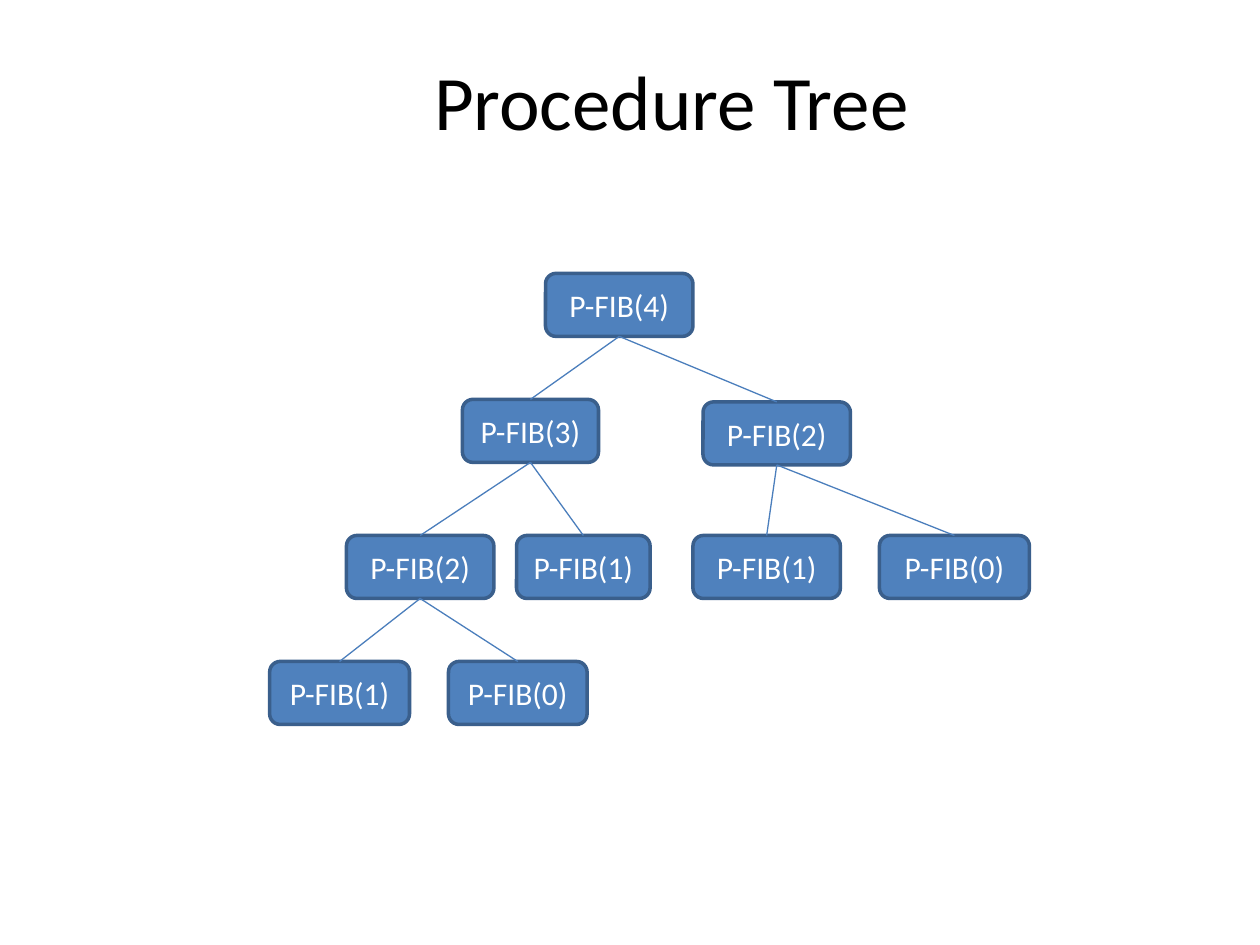
from lxml import etree
from pptx import Presentation
from pptx.dml.color import RGBColor
from pptx.enum.shapes import MSO_CONNECTOR, MSO_SHAPE
from pptx.enum.text import MSO_ANCHOR, PP_ALIGN
from pptx.oxml.ns import qn
from pptx.util import Inches, Pt

STRAIGHT = MSO_CONNECTOR.STRAIGHT
ROUNDED = MSO_SHAPE.ROUNDED_RECTANGLE
MIDDLE = MSO_ANCHOR.MIDDLE
CENTER = PP_ALIGN.CENTER

COLORS = {"title": "000000", "node": "4F81BD", "border": "3A5F8C",
          "label": "FFFFFF", "edge": "4B7EBC"}
FONT = "Calibri"
NODE_HEIGHT = 0.5
TOP_SITE, BOTTOM_SITE = 0, 2

# (argument, left, top, width, children)
TREE = (4, 4.33, 2.17, 1.17, [
    (3, 3.67, 3.17, 1.08, [
        (2, 2.75, 4.25, 1.17, [
            (1, 2.14, 5.25, 1.11, []),
            (0, 3.56, 5.25, 1.1, []),
        ]),
        (1, 4.1, 4.25, 1.06, []),
    ]),
    (2, 5.58, 3.19, 1.17, [
        (1, 5.5, 4.25, 1.17, []),
        (0, 6.98, 4.25, 1.19, []),
    ]),
])


def rgb(name):
    return RGBColor.from_string(COLORS[name])


def write_text(sp, text, size, color):
    tf = sp.text_frame
    tf.word_wrap = True
    tf.vertical_anchor = MIDDLE
    p = tf.paragraphs[0]
    p.alignment = CENTER
    r = p.add_run()
    r.text = text
    r.font.name = FONT
    r.font.size = Pt(size)
    r.font.color.rgb = rgb(color)


def add_title(slide, text):
    sp = slide.shapes.title
    sp.left, sp.top = Inches(0.83), Inches(0.17)
    sp.width, sp.height = Inches(9), Inches(1.25)
    write_text(sp, text, size=44, color="title")


def add_node(slide, argument, left, top, width):
    sp = slide.shapes.add_shape(ROUNDED, Inches(left), Inches(top),
                                Inches(width), Inches(NODE_HEIGHT))
    sp.shadow.inherit = False
    sp.fill.solid()
    sp.fill.fore_color.rgb = rgb("node")
    sp.line.color.rgb = rgb("border")
    sp.line.width = Pt(2)
    write_text(sp, f"P-FIB({argument})", size=18, color="label")
    return sp


def add_edge(slide, parent, child):
    line = slide.shapes.add_connector(STRAIGHT, 0, 0, 0, 0)
    line.begin_connect(parent, BOTTOM_SITE)
    line.end_connect(child, TOP_SITE)
    line.line.color.rgb = rgb("edge")
    line.line.width = Pt(0.75)
    etree.SubElement(line._element.spPr, qn("a:effectLst"))


def add_tree(slide, node):
    *placement, children = node
    parent = add_node(slide, *placement)
    for child in children:
        add_edge(slide, parent, add_tree(slide, child))
    return parent


def main():
    prs = Presentation()
    prs.slide_width, prs.slide_height = Inches(10), Inches(7.5)
    slide = prs.slides.add_slide(prs.slide_layouts[5])
    add_title(slide, " Procedure Tree ")
    add_tree(slide, TREE)
    prs.save("out.pptx")


if __name__ == "__main__":
    main()
